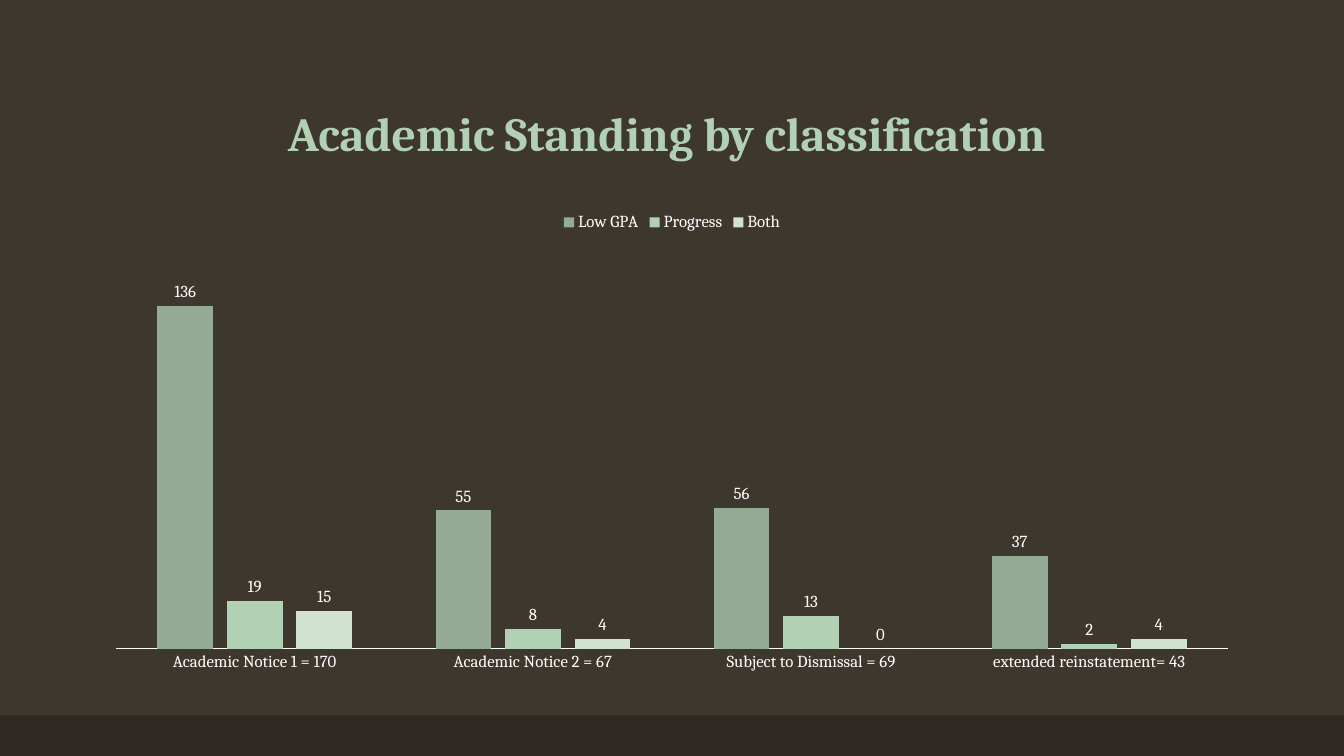
from pptx import Presentation
from pptx import util as u
from pptx.chart.data import CategoryChartData
from pptx.dml.color import RGBColor
from pptx.enum import chart as charts, shapes, text

COLORS = {
    "background": "3D372E",
    "footer": "2E2923",
    "title": "B2D0B4",
    "text": "FFFFFF",
    "Low GPA": "94AC95",
    "Progress": "B2D0B4",
    "Both": "D1E2D2",
}
CATEGORIES = [
    "Academic Notice 1 = 170",
    "Academic Notice 2 = 67",
    "Subject to Dismissal = 69",
    "extended reinstatement= 43",
]
STUDENTS = {
    "Low GPA": [136, 55, 56, 37],
    "Progress": [19, 8, 13, 2],
    "Both": [15, 4, 0, 4],
}


def assign(target, values):
    for name, value in values.items():
        setattr(target, name, value)


class SlideBuilder:
    font_name = "Cambria"

    def __init__(self, deck):
        self.page = deck.slides.add_slide(deck.slide_layouts[5])
        self.paint(self.page.background.fill, "background")

    def color(self, name):
        return RGBColor.from_string(COLORS[name])

    def paint(self, fill, name):
        fill.solid()
        fill.fore_color.rgb = self.color(name)

    def style(self, font, size, color="text", bold=False):
        assign(font, {"name": self.font_name, "size": u.Pt(size), "bold": bold})
        font.color.rgb = self.color(color)

    def place(self, left, top, width, height):
        return [u.Cm(length) for length in (left, top, width, height)]

    def band(self, *area):
        box = self.page.shapes.add_shape(
            shapes.MSO_SHAPE.RECTANGLE, *self.place(*area))
        box.shadow.inherit = False
        self.paint(box.fill, "footer")
        box.line.fill.background()

    def title(self, words, *area):
        box = self.page.shapes.title
        names = ("left", "top", "width", "height")
        assign(box, dict(zip(names, self.place(*area))))
        assign(box.text_frame, {
            "text": words,
            "word_wrap": True,
            "auto_size": text.MSO_AUTO_SIZE.NONE,
            "vertical_anchor": text.MSO_ANCHOR.BOTTOM,
        })
        para = box.text_frame.paragraphs[0]
        assign(para, {"alignment": text.PP_ALIGN.CENTER, "line_spacing": 0.9})
        self.style(para.runs[0].font, 34, "title", True)

    def column_chart(self, categories, series_values, *area):
        data = CategoryChartData()
        data.categories = categories
        for name, values in series_values.items():
            data.add_series(name, values)
        chart = self.page.shapes.add_chart(
            charts.XL_CHART_TYPE.COLUMN_CLUSTERED, *self.place(*area), data).chart
        self.style(chart.font, 10)
        assign(chart, {"has_title": False, "has_legend": True})
        assign(chart.legend, {
            "position": charts.XL_LEGEND_POSITION.TOP,
            "include_in_layout": False,
        })
        self.style(chart.legend.font, 12)

        assign(chart.value_axis, {
            "visible": False,
            "has_major_gridlines": False,
            "minimum_scale": 0,
            "maximum_scale": 160,
        })
        axis = chart.category_axis
        assign(axis, {
            "major_tick_mark": charts.XL_TICK_MARK.NONE,
            "minor_tick_mark": charts.XL_TICK_MARK.NONE,
        })
        self.style(axis.tick_labels.font, 12)
        self.paint(axis.format.line.fill, "text")
        axis.format.line.width = u.Pt(0.75)

        plot = chart.plots[0]
        assign(plot, {"gap_width": 150, "overlap": -25, "vary_by_categories": False})
        for series in plot.series:
            self.paint(series.format.fill, series.name)
            series.invert_if_negative = False
            labels = series.data_labels
            assign(labels, {
                "show_value": True,
                "position": charts.XL_LABEL_POSITION.OUTSIDE_END,
            })
            self.style(labels.font, 12)


def main():
    deck = Presentation()
    assign(deck, {"slide_width": u.Cm(33.87), "slide_height": u.Cm(19.05)})
    slide = SlideBuilder(deck)
    slide.band(0, 18.03, 33.87, 1.02)
    slide.title("Academic Standing by classification ", 2.33, 1.02, 29.21, 3.18)
    slide.column_chart(CATEGORIES, STUDENTS, 2.33, 5.08, 29.21, 12.09)
    deck.save("out.pptx")


if __name__ == "__main__":
    main()
